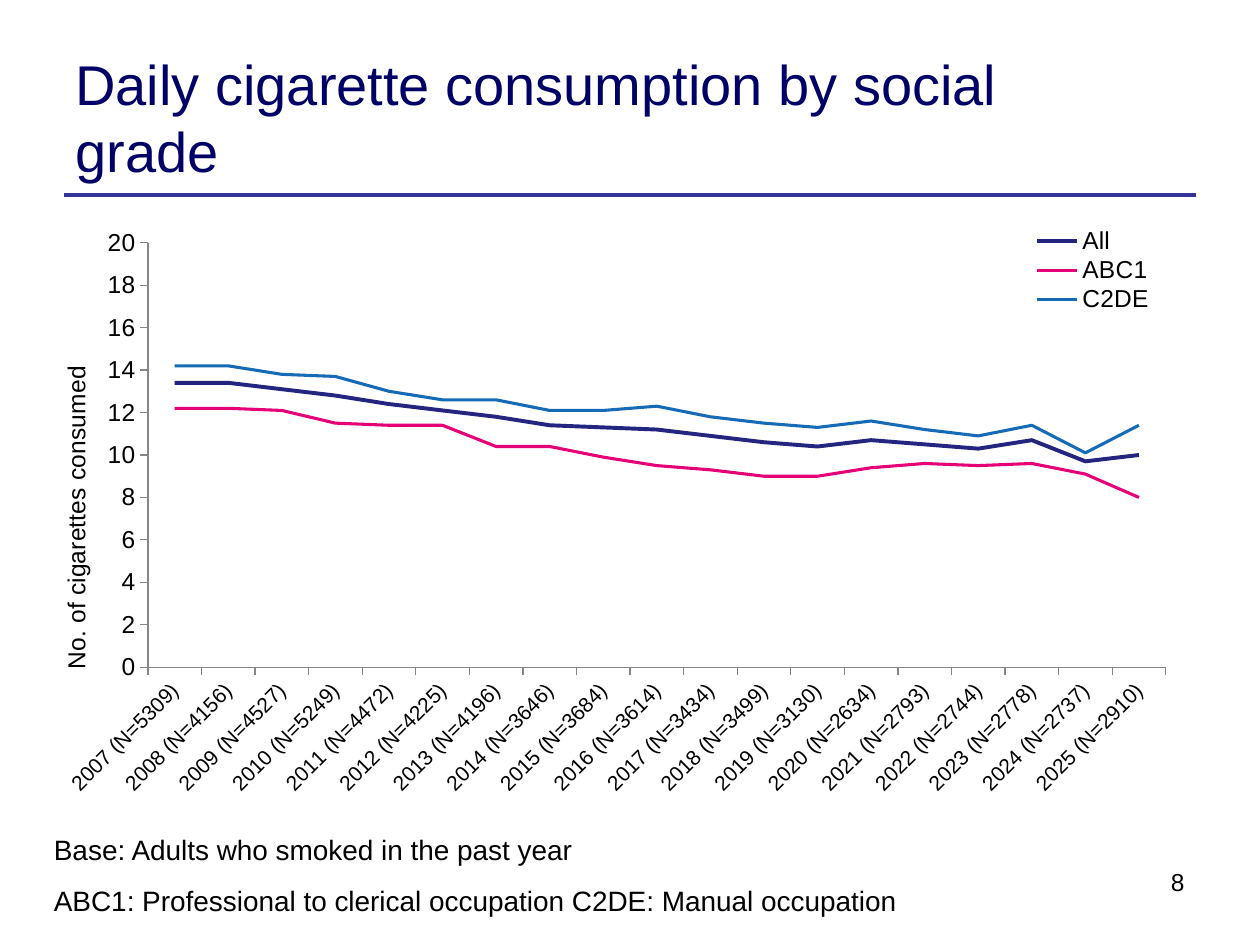
from dataclasses import dataclass

from lxml import etree
from pptx import Presentation
from pptx.chart.data import CategoryChartData
from pptx.dml.color import RGBColor
from pptx.enum.chart import XL_CHART_TYPE, XL_LEGEND_POSITION, XL_TICK_MARK
from pptx.enum.shapes import MSO_CONNECTOR
from pptx.enum.text import MSO_ANCHOR, MSO_AUTO_SIZE, PP_ALIGN
from pptx.oxml.ns import qn
from pptx.util import Inches, Pt

LINE_CHART = XL_CHART_TYPE.LINE
LEGEND_RIGHT = XL_LEGEND_POSITION.RIGHT
TICK_OUTSIDE, TICK_NONE = XL_TICK_MARK.OUTSIDE, XL_TICK_MARK.NONE
STRAIGHT = MSO_CONNECTOR.STRAIGHT
TOP, MIDDLE = MSO_ANCHOR.TOP, MSO_ANCHOR.MIDDLE
FIT_SHAPE = MSO_AUTO_SIZE.SHAPE_TO_FIT_TEXT
LEFT, RIGHT = PP_ALIGN.LEFT, PP_ALIGN.RIGHT


@dataclass(frozen=True)
class Theme:
    font: str = "Arial"
    text: str = "000000"
    heading: str = "000066"
    rule: str = "333399"
    axis: str = "868686"
    heading_size: int = 32
    note_size: int = 16
    label_size: int = 14
    category_size: int = 12


RESPONDENTS = [5309, 4156, 4527, 5249, 4472, 4225, 4196, 3646, 3684, 3614,
               3434, 3499, 3130, 2634, 2793, 2744, 2778, 2737, 2910]
CATEGORIES = [f"{year} (N={count})" for year, count in enumerate(RESPONDENTS, 2007)]

# name, colour, line width, values
SERIES = [
    ("All", "24257E", 2.25,
     [13.4, 13.4, 13.1, 12.8, 12.4, 12.1, 11.8, 11.4, 11.3, 11.2,
      10.9, 10.6, 10.4, 10.7, 10.5, 10.3, 10.7, 9.7, 10]),
    ("ABC1", "E50078", 1.75,
     [12.2, 12.2, 12.1, 11.5, 11.4, 11.4, 10.4, 10.4, 9.9, 9.5,
      9.3, 9, 9, 9.4, 9.6, 9.5, 9.6, 9.1, 8]),
    ("C2DE", "156BB5", 1.75,
     [14.2, 14.2, 13.8, 13.7, 13, 12.6, 12.6, 12.1, 12.1, 12.3,
      11.8, 11.5, 11.3, 11.6, 11.2, 10.9, 11.4, 10.1, 11.4]),
]


def set_layout(element, index, x, y, width=None, height=None, inner=False):
    """Place a chart part by fractions of the chart area."""
    for old in element.findall(qn("c:layout")):
        element.remove(old)
    layout = etree.Element(qn("c:layout"))
    manual = etree.SubElement(layout, qn("c:manualLayout"))
    settings = [("layoutTarget", "inner" if inner else None),
                ("xMode", "edge"), ("yMode", "edge"),
                ("x", x), ("y", y), ("w", width), ("h", height)]
    for tag, value in settings:
        if value is not None:
            etree.SubElement(manual, qn(f"c:{tag}")).set("val", str(value))
    element.insert(index, layout)


class SlideBuilder:
    def __init__(self, slide, theme):
        self.slide = slide
        self.theme = theme

    def style_font(self, font, size, color=None):
        font.name = self.theme.font
        font.size = Pt(size)
        font.bold = False
        font.color.rgb = RGBColor.from_string(color or self.theme.text)

    def add_text(self, text, left, top, width, height, size, color=None,
                 align=LEFT, anchor=TOP, wrap=True):
        box = self.slide.shapes.add_textbox(
            Inches(left), Inches(top), Inches(width), Inches(height))
        frame = box.text_frame
        frame.word_wrap = wrap
        frame.vertical_anchor = anchor
        if not wrap:
            frame.auto_size = FIT_SHAPE
        para = frame.paragraphs[0]
        para.text = text
        para.alignment = align
        self.style_font(para.font, size, color)

    def add_rule(self, left, right, top):
        rule = self.slide.shapes.add_connector(
            STRAIGHT, Inches(left), Inches(top), Inches(right), Inches(top))
        rule.line.color.rgb = RGBColor.from_string(self.theme.rule)
        rule.line.width = Pt(2.25)
        etree.SubElement(rule._element.spPr, qn("a:effectLst"))

    def style_axis(self, axis, size):
        axis.has_major_gridlines = False
        axis.major_tick_mark = TICK_OUTSIDE
        axis.minor_tick_mark = TICK_NONE
        axis.format.line.color.rgb = RGBColor.from_string(self.theme.axis)
        axis.format.line.width = Pt(0.75)
        self.style_font(axis.tick_labels.font, size)

    def add_line_chart(self, left, top, width, height, axis_title):
        data = CategoryChartData()
        data.categories = CATEGORIES
        for name, _, _, values in SERIES:
            data.add_series(name, values)
        chart = self.slide.shapes.add_chart(
            LINE_CHART, Inches(left), Inches(top),
            Inches(width), Inches(height), data).chart
        chart.has_title = False
        self.style_font(chart.font, 18)
        chart.plots[0].vary_by_categories = False
        for series, (_, color, line_width, _) in zip(chart.plots[0].series, SERIES):
            series.smooth = False
            series.format.line.color.rgb = RGBColor.from_string(color)
            series.format.line.width = Pt(line_width)

        self.style_axis(chart.category_axis, self.theme.category_size)
        labels = chart.category_axis._element.find(qn("c:txPr"))
        labels.find(qn("a:bodyPr")).set("rot", "-2700000")

        values_axis = chart.value_axis
        self.style_axis(values_axis, self.theme.label_size)
        values_axis.minimum_scale = 0
        values_axis.maximum_scale = 20
        values_axis.major_unit = 2
        title = values_axis.axis_title
        para = title.text_frame.paragraphs[0]
        para.text = axis_title
        self.style_font(para.font, self.theme.label_size)
        title.text_frame._txBody.find(qn("a:bodyPr")).set("rot", "-5400000")

        chart.has_legend = True
        chart.legend.position = LEGEND_RIGHT
        chart.legend.include_in_layout = False
        self.style_font(chart.legend.font, self.theme.label_size)

        plot_area = chart._chartSpace.chart.plotArea
        set_layout(plot_area, 0, 0.09, 0.038, 0.883, 0.723, inner=True)
        set_layout(title._element, 1, 0.01, 0.24)
        set_layout(chart.legend._element, 1, 0.85, 0.01, 0.12, 0.15)


def main():
    deck = Presentation()
    deck.slide_width, deck.slide_height = Inches(10), Inches(7.5)
    theme = Theme()
    page = SlideBuilder(deck.slides.add_slide(deck.slide_layouts[6]), theme)

    page.add_rule(0.51, 9.49, 1.55)
    page.add_text("Daily cigarette consumption by social grade", 0.5, 0.3, 7.89, 1.25,
                  theme.heading_size, theme.heading, anchor=MIDDLE)
    page.add_line_chart(0.35, 1.75, 9.15, 4.66, "No. of cigarettes consumed")
    page.add_text("8", 6.73, 6.83, 2.77, 0.52, theme.label_size, align=RIGHT)
    page.add_text("ABC1: Professional to clerical occupation C2DE: Manual occupation",
                  0.33, 6.96, 6.97, 0.37, theme.note_size, wrap=False)
    page.add_text("Base: Adults who smoked in the past year",
                  0.33, 6.56, 4.37, 0.37, theme.note_size, wrap=False)
    deck.save("out.pptx")


if __name__ == "__main__":
    main()
